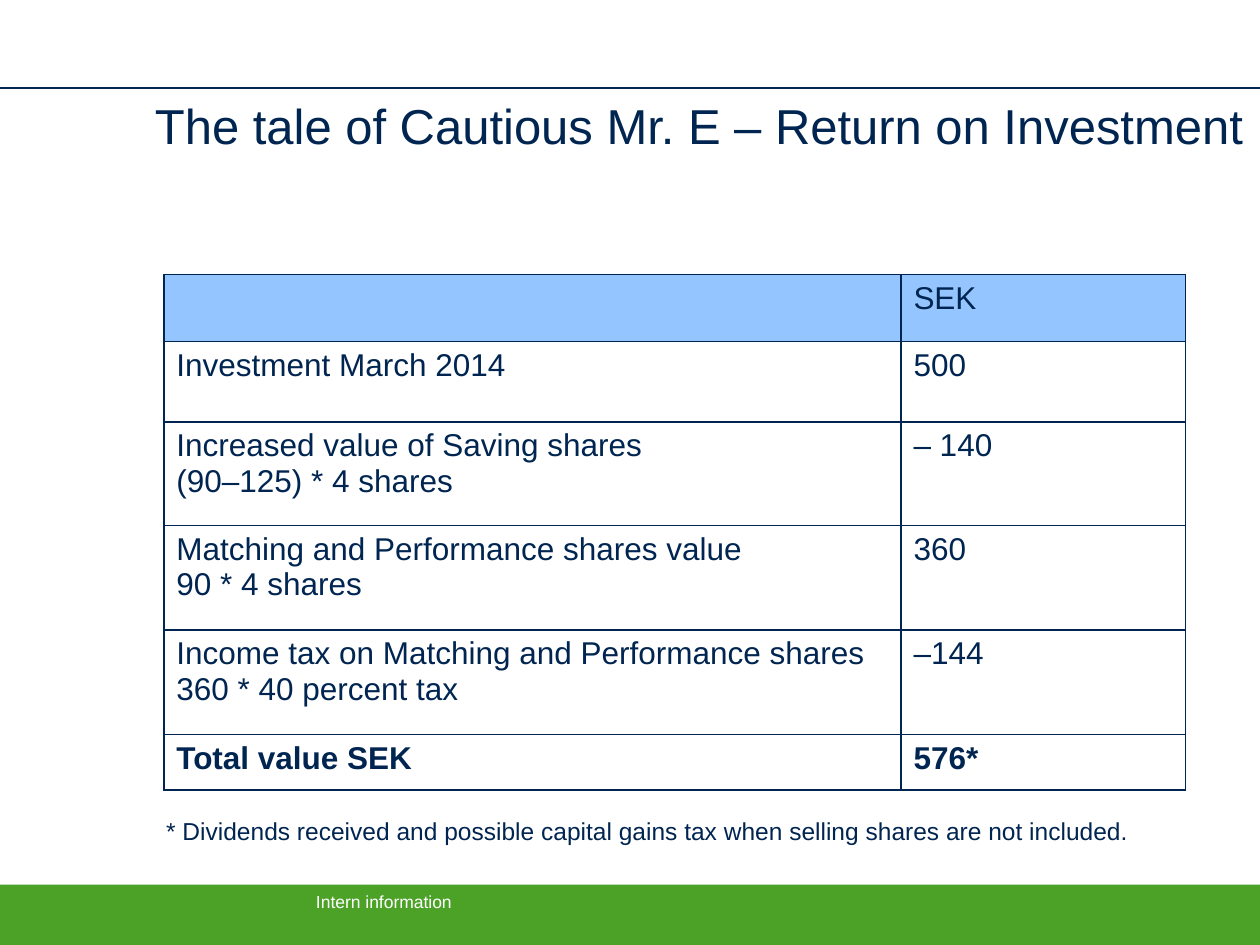
from lxml import etree
from pptx import Presentation
from pptx import util as u
from pptx.dml.color import RGBColor
from pptx.enum import shapes, text
from pptx.oxml.ns import qn

WIDE, HIGH = u.Inches(10), u.Inches(7.5)
COLS, ROWS = 1000, 750
HUES = {"navy": "002551", "green": "4BA227", "sky": "94C5FF", "white": "FFFFFF"}
FONT = "Arial"

WIDTHS = [585, 226]
HEIGHTS = [53, 64, 82, 83, 83, 44]
CELLS = [
    ["", "SEK"],
    ["Investment March 2014", "500"],
    ["Increased value of Saving shares\v(90–125) * 4 shares", "– 140"],
    ["Matching and Performance shares value\v90 * 4 shares", "360"],
    ["Income tax on Matching and Performance shares\n360 * 40 percent tax", "–144"],
    ["Total value SEK", "576*"],
]


def hue(name):
    return RGBColor.from_string(HUES[name])


def col(n):
    return round(WIDE * n / COLS)


def row(n):
    return round(HIGH * n / ROWS)


def grid(x, y, w, h):
    return col(x), row(y), col(w), row(h)


def style(frame, size, tint, bold=False):
    for para in frame.paragraphs:
        font = para.font
        font.name, font.size, font.bold = FONT, u.Pt(size), bold
        font.color.rgb = hue(tint)


def label(slide, place, words, size, tint, side=0.1):
    frame = slide.shapes.add_textbox(*grid(*place)).text_frame
    frame.word_wrap = True
    frame.vertical_anchor = text.MSO_ANCHOR.TOP
    frame.margin_left = frame.margin_right = u.Inches(side)
    frame.text = words
    style(frame, size, tint)
    return frame.paragraphs[0]


def band(slide, place, tint):
    shape = slide.shapes.add_shape(shapes.MSO_SHAPE.RECTANGLE, *grid(*place))
    shape.shadow.inherit = False
    shape.fill.solid()
    shape.fill.fore_color.rgb = hue(tint)
    shape.line.fill.background()


def rule(slide, y, tint):
    line = slide.shapes.add_connector(
        shapes.MSO_CONNECTOR.STRAIGHT, 0, row(y), WIDE, row(y))
    line.line.color.rgb = hue(tint)
    line.line.width = u.Pt(1)
    etree.SubElement(line._element.spPr, qn("a:effectLst"))


def border(cell, tint):
    props = cell._tc.get_or_add_tcPr()
    for side in ("lnL", "lnR", "lnT", "lnB"):
        edge = etree.SubElement(props, qn(f"a:{side}"), w=str(u.Pt(1)))
        fill = etree.SubElement(edge, qn("a:solidFill"))
        etree.SubElement(fill, qn("a:srgbClr"), val=HUES[tint])


def table(slide, x, y):
    place = grid(x, y, sum(WIDTHS), sum(HEIGHTS))
    grid_table = slide.shapes.add_table(len(HEIGHTS), len(WIDTHS), *place).table
    grid_table.first_row = grid_table.horz_banding = False
    for part, width in zip(grid_table.columns, WIDTHS):
        part.width = col(width)
    for part, height in zip(grid_table.rows, HEIGHTS):
        part.height = row(height)
    last = len(CELLS) - 1
    for r, line in enumerate(CELLS):
        for c, words in enumerate(line):
            cell = grid_table.cell(r, c)
            border(cell, "navy")
            if r == 0:
                cell.fill.solid()
                cell.fill.fore_color.rgb = hue("sky")
            else:
                cell.fill.background()
            cell.text_frame.text = words
            style(cell.text_frame, 18, "navy", r == last)


def main():
    deck = Presentation()
    deck.slide_width, deck.slide_height = WIDE, HIGH
    slide = deck.slides.add_slide(deck.slide_layouts[6])
    band(slide, (0, 702, COLS, 48), "green")
    label(slide, (241, 702, 613, 27), "Intern information", 10, "white")
    rule(slide, 70, "navy")
    title = label(slide, (118, 76, 882, 94),
                  "The tale of Cautious Mr. E – Return on Investment",
                  28, "navy", 0.05)
    title.line_spacing = 0.9
    table(slide, 130, 218)
    label(slide, (122, 643, 787, 34),
          "* Dividends received and possible capital gains tax "
          "when selling shares are not included.", 14, "navy")
    deck.save("out.pptx")


if __name__ == "__main__":
    main()
